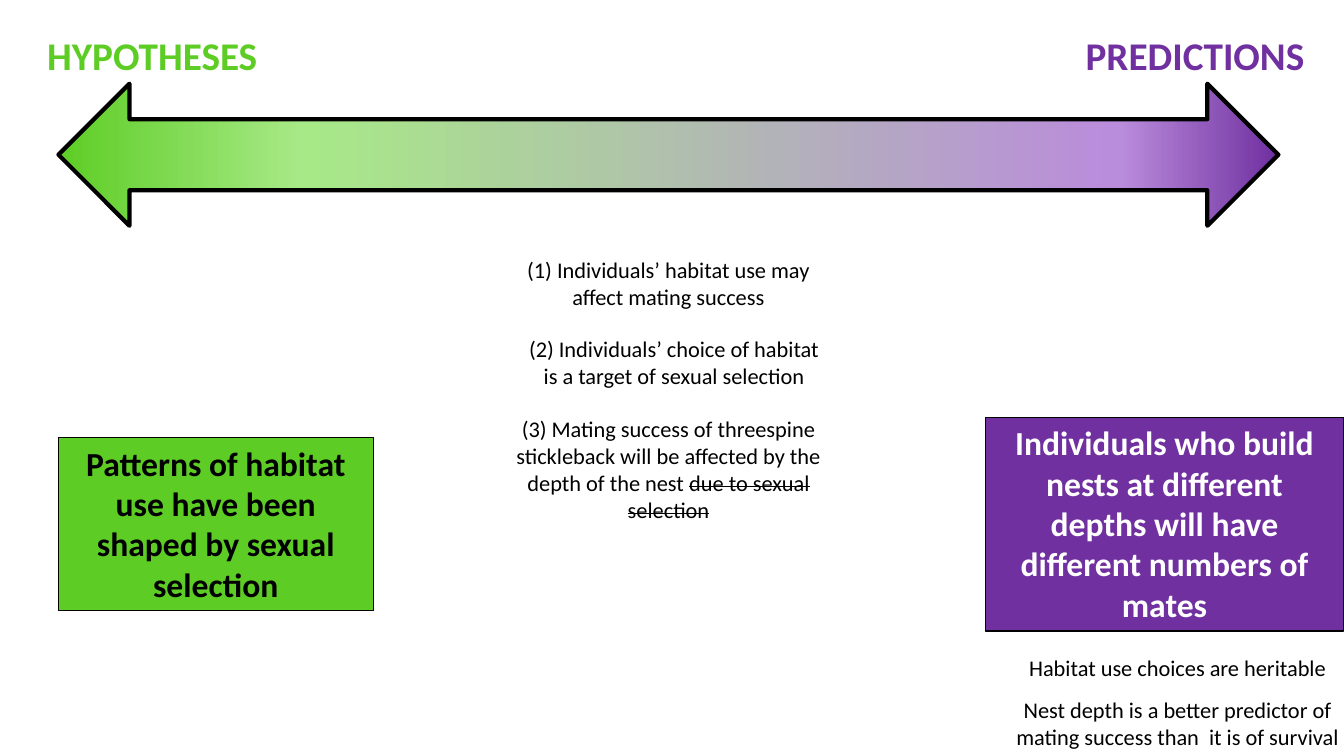
from dataclasses import dataclass
from lxml import etree
from pptx import Presentation
from pptx.dml.color import RGBColor as RGB
from pptx.enum.shapes import MSO_SHAPE as SHAPE
from pptx.enum.text import MSO_ANCHOR as ANCHOR, MSO_AUTO_SIZE as AUTO, PP_ALIGN as ALIGN
from pptx.oxml.ns import qn
from pptx.util import Inches, Pt


@dataclass(frozen=True)
class Theme:
    font: str = "Calibri"
    green: str = "5DCD25"
    light_green: str = "A8E987"
    light_purple: str = "BA8CDC"
    purple: str = "7030A0"
    black: str = "000000"
    white: str = "FFFFFF"
    heading: int = 28
    box: int = 24
    body: int = 16


T = Theme()

# Content: places are (left, top, width, height) in inches
ARROW = (0.58, 0.83, 12.1, 1.41)
GRADIENT = [(0, T.green), (20, T.light_green), (87, T.light_purple), (100, T.purple)]
HEADINGS = [
    ("HYPOTHESES", (0.37, 0.26, 2.66, 0.57), T.green),
    ("PREDICTIONS", (10.67, 0.26, 2.66, 0.57), T.purple),
]
BOXES = [
    ("Patterns of habitat use have been shaped by sexual selection",
     (0.58, 4.34, 3.12, 1.72), T.green, T.black),
    ("Individuals who build nests at different depths will have different numbers of mates",
     (9.77, 4.14, 3.56, 2.12), T.purple, T.white),
]
# Statements: kept text, struck-out text, place
STATEMENTS = [
    ("(1) Individuals’ habitat use may affect mating success", "", (5.1, 2.49, 3.06, 0.64)),
    ("(2) Individuals’ choice of habitat is a target of sexual selection", "",
     (5.1, 3.28, 3.17, 0.64)),
    ("(3) Mating success of threespine stickleback will be affected by the depth of the nest ",
     "due to sexual selection", (4.94, 4.07, 3.38, 1.18)),
    ("Habitat use choices are heritable", "", (9.9, 6.44, 3.56, 0.37)),
    ("Nest depth is a better predictor of mating success than  it is of survival", "",
     (9.9, 6.86, 3.56, 0.64)),
]

prs = Presentation()
prs.slide_width, prs.slide_height = Inches(13.33), Inches(7.5)
slide = prs.slides.add_slide(prs.slide_layouts[6])


def add_block(kind, place, line_width):
    sp = slide.shapes.add_shape(kind, *map(Inches, place))
    sp.shadow.inherit = False
    sp.line.color.rgb = RGB.from_string(T.black)
    sp.line.width = Pt(line_width)
    return sp


def write(sp, text, size, color, bold=False, align=ALIGN.CENTER):
    tf = sp.text_frame
    tf.word_wrap = True
    tf.auto_size = AUTO.SHAPE_TO_FIT_TEXT
    tf.vertical_anchor = ANCHOR.TOP
    p = tf.paragraphs[0]
    p.alignment = align
    p.font.name, p.font.size, p.font.bold = T.font, Pt(size), bold
    p.font.color.rgb = RGB.from_string(color)
    p.add_run().text = text
    return p


def add_text(place, *args, **kwargs):
    return write(slide.shapes.add_textbox(*map(Inches, place)), *args, **kwargs)


# Gradient arrow
arrow = add_block(SHAPE.LEFT_RIGHT_ARROW, ARROW, 3)
arrow.fill.gradient()
arrow.fill.gradient_angle = 0
stops = arrow._element.spPr.find(qn("a:gradFill")).find(qn("a:gsLst"))
for old in list(stops):
    stops.remove(old)
for percent, color in GRADIENT:
    stop = etree.SubElement(stops, qn("a:gs"), pos=str(percent * 1000))
    etree.SubElement(stop, qn("a:srgbClr"), val=color)

# Headings at the arrow's ends
for text, place, color in HEADINGS:
    add_text(place, text, T.heading, color, bold=True, align=ALIGN.LEFT)

# Hypothesis and prediction boxes
for text, place, fill, color in BOXES:
    sp = add_block(SHAPE.RECTANGLE, place, 0.75)
    sp.fill.solid()
    sp.fill.fore_color.rgb = RGB.from_string(fill)
    write(sp, text, T.box, color, bold=True)

# Statements between the two ends
for text, struck, place in STATEMENTS:
    p = add_text(place, text, T.body, T.black)
    if struck:
        r = p.add_run()
        r.text = struck
        r._r.get_or_add_rPr().set("strike", "sngStrike")

prs.save("out.pptx")
